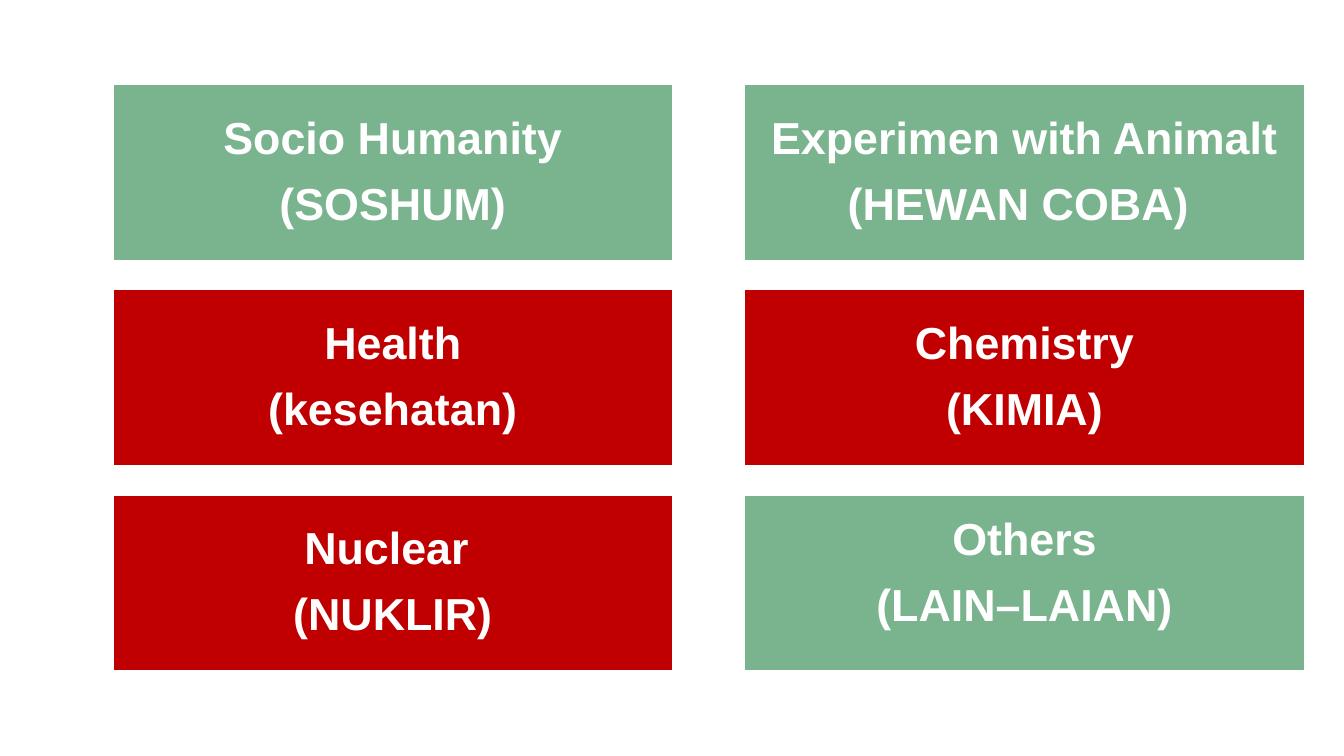
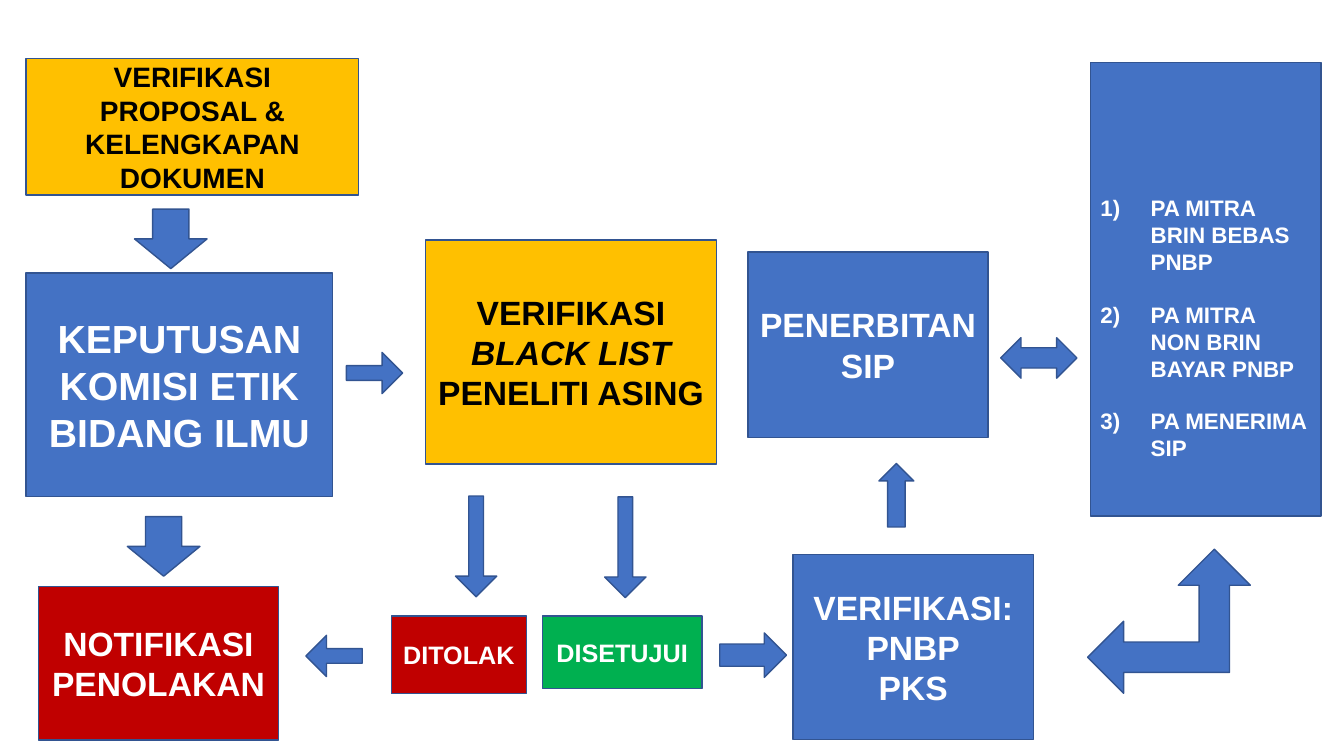
from dataclasses import dataclass

from lxml import etree
from pptx import Presentation
from pptx.dml.color import RGBColor
from pptx.enum.shapes import MSO_SHAPE
from pptx.enum.text import MSO_ANCHOR, PP_ALIGN
from pptx.oxml.ns import qn
from pptx.util import Cm, Pt

RECT = MSO_SHAPE.RECTANGLE
DOWN = MSO_SHAPE.DOWN_ARROW
UP = MSO_SHAPE.UP_ARROW
LEFT = MSO_SHAPE.LEFT_ARROW
RIGHT = MSO_SHAPE.RIGHT_ARROW
LEFT_RIGHT = MSO_SHAPE.LEFT_RIGHT_ARROW
LEFT_UP = MSO_SHAPE.LEFT_UP_ARROW
CENTER = PP_ALIGN.CENTER
ALIGN_LEFT = PP_ALIGN.LEFT
MIDDLE = MSO_ANCHOR.MIDDLE

FONT = "Arial"
WHITE = "FFFFFF"
BLACK = "000000"
SAGE = "7AB48E"
RED = "C00000"
BLUE = "4472C4"
NAVY = "325491"
AMBER = "FFC000"
GREEN = "00B050"
SLIM = (0.357, 0.5)


@dataclass(frozen=True)
class Field:
    label: str
    fill: str
    lift: float = 0


@dataclass(frozen=True)
class Step:
    label: str
    area: tuple[float, float, float, float]
    size: int
    fill: str = BLUE
    color: str = WHITE
    italic: str = ""


@dataclass(frozen=True)
class Arrow:
    kind: int
    area: tuple[float, float, float, float]
    bends: tuple[float, ...] = ()


FIELDS = [
    Field("Socio Humanity\n(SOSHUM)", SAGE),
    Field("Experimen with Animalt\n(HEWAN COBA) ", SAGE),
    Field("Health\n(kesehatan)", RED),
    Field("Chemistry\n(KIMIA)", RED),
    Field("Nuclear \n(NUKLIR)", RED),
    Field("Others\n(LAIN–LAIAN)", SAGE, lift=0.45),
]

STEPS = [
    Step("VERIFIKASI PROPOSAL & KELENGKAPAN DOKUMEN",
         (0.66, 1.47, 8.38, 3.45), 20, AMBER, BLACK),
    Step("KEPUTUSAN KOMISI ETIK BIDANG ILMU", (0.66, 6.88, 7.72, 5.64), 28),
    Step("VERIFIKASI BLACK LIST PENELITI ASING",
         (10.72, 6.05, 7.34, 5.64), 24, AMBER, BLACK, "BLACK LIST "),
    Step("NOTIFIKASI PENOLAKAN", (0.97, 14.78, 6.05, 3.87), 24, RED),
    Step("DITOLAK", (9.86, 15.52, 3.41, 1.96), 18, RED),
    Step("DISETUJUI", (13.67, 15.52, 4.02, 1.83), 18, GREEN),
    Step("VERIFIKASI: PNBP\nPKS", (19.99, 13.97, 6.05, 4.67), 24),
    Step("PENERBITAN SIP", (18.85, 6.35, 6.05, 4.67), 24),
]

ARROWS = [
    Arrow(DOWN, (3.39, 5.27, 1.83, 1.5)),
    Arrow(DOWN, (3.21, 13.02, 1.83, 1.5)),
    Arrow(RIGHT, (8.73, 8.88, 1.42, 1.04), SLIM),
    Arrow(DOWN, (11.48, 12.5, 1.04, 2.54), SLIM),
    Arrow(DOWN, (15.24, 12.52, 1.04, 2.54), SLIM),
    Arrow(LEFT, (7.71, 16.01, 1.42, 1.04), SLIM),
    Arrow(RIGHT, (18.14, 15.95, 1.68, 1.12)),
    Arrow(UP, (22.15, 11.68, 0.88, 1.6)),
    Arrow(LEFT_RIGHT, (25.22, 8.51, 1.92, 1.02)),
    Arrow(LEFT_UP, (27.41, 13.84, 4.1, 3.63), (0.211, 0.25, 0.25)),
]

PARTNER_TERMS = "PA MITRA BRIN BEBAS PNBP\nPA MITRA NON BRIN BAYAR PNBP\nPA MENERIMA SIP"
PARTNER_AREA = (27.48, 1.57, 5.81, 11.43)


def rgb(color: str) -> RGBColor:
    return RGBColor.from_string(color)


def draw(slide, kind: int, area: tuple, fill: str, line: str, bends: tuple = ()):
    shape = slide.shapes.add_shape(kind, *map(Cm, area))
    shape.shadow.inherit = False
    shape.fill.solid()
    shape.fill.fore_color.rgb = rgb(fill)
    shape.line.color.rgb = rgb(line)
    shape.line.width = Pt(1)
    for index, bend in enumerate(bends):
        shape.adjustments[index] = bend
    return shape


def number(paragraph) -> None:
    properties = paragraph._p.get_or_add_pPr()
    properties.set("marL", str(Cm(1.27)))
    properties.set("indent", str(-Cm(1.27)))
    etree.SubElement(properties, qn("a:buFont"), typeface="+mj-lt")
    etree.SubElement(properties, qn("a:buAutoNum"), type="arabicParenR")


def write(shape, text: str, *, size: int, color: str = WHITE, italic: str = "",
          align: int = CENTER, spacing: float = 1, gap: float = 0,
          numbered: bool = False, inset_top: float = 0.13,
          inset_bottom: float = 0.13) -> None:
    frame = shape.text_frame
    frame.word_wrap = True
    frame.vertical_anchor = MIDDLE
    frame.margin_top, frame.margin_bottom = Cm(inset_top), Cm(inset_bottom)
    for index, content in enumerate(text.split("\n")):
        paragraph = frame.add_paragraph() if index else frame.paragraphs[0]
        paragraph.alignment = align
        paragraph.line_spacing = spacing
        paragraph.space_before = Pt(gap if index else 0)
        if numbered:
            number(paragraph)
        pieces = content.partition(italic) if italic else (content,)
        for piece in filter(None, pieces):
            run = paragraph.add_run()
            run.text = piece
            run.font.name = FONT
            run.font.size = Pt(size)
            run.font.bold = True
            run.font.italic = piece == italic
            run.font.color.rgb = rgb(color)


def build_fields(slide) -> None:
    for index, field in enumerate(FIELDS):
        row, column = divmod(index, 2)
        area = (2.85 + column * 15.92, 2.13 + row * 5.17, 14.1, 4.44)
        card = draw(slide, RECT, area, field.fill, WHITE)
        write(card, field.label, size=32, spacing=0.9, gap=12.6,
              inset_top=0.38, inset_bottom=0.38 + field.lift)


def build_flow(slide) -> None:
    for step in STEPS:
        box = draw(slide, RECT, step.area, step.fill, NAVY)
        write(box, step.label, size=step.size, color=step.color, italic=step.italic)
    terms = draw(slide, RECT, PARTNER_AREA, BLUE, NAVY)
    write(terms, PARTNER_TERMS, size=16, align=ALIGN_LEFT, gap=18.4,
          numbered=True, inset_top=2.08)
    for arrow in ARROWS:
        draw(slide, arrow.kind, arrow.area, BLUE, NAVY, arrow.bends)


def main() -> None:
    deck = Presentation()
    deck.slide_width, deck.slide_height = Cm(33.87), Cm(19.05)
    blank = deck.slide_layouts[6]
    for build in (build_fields, build_flow):
        build(deck.slides.add_slide(blank))
    deck.save("out.pptx")


if __name__ == "__main__":
    main()
